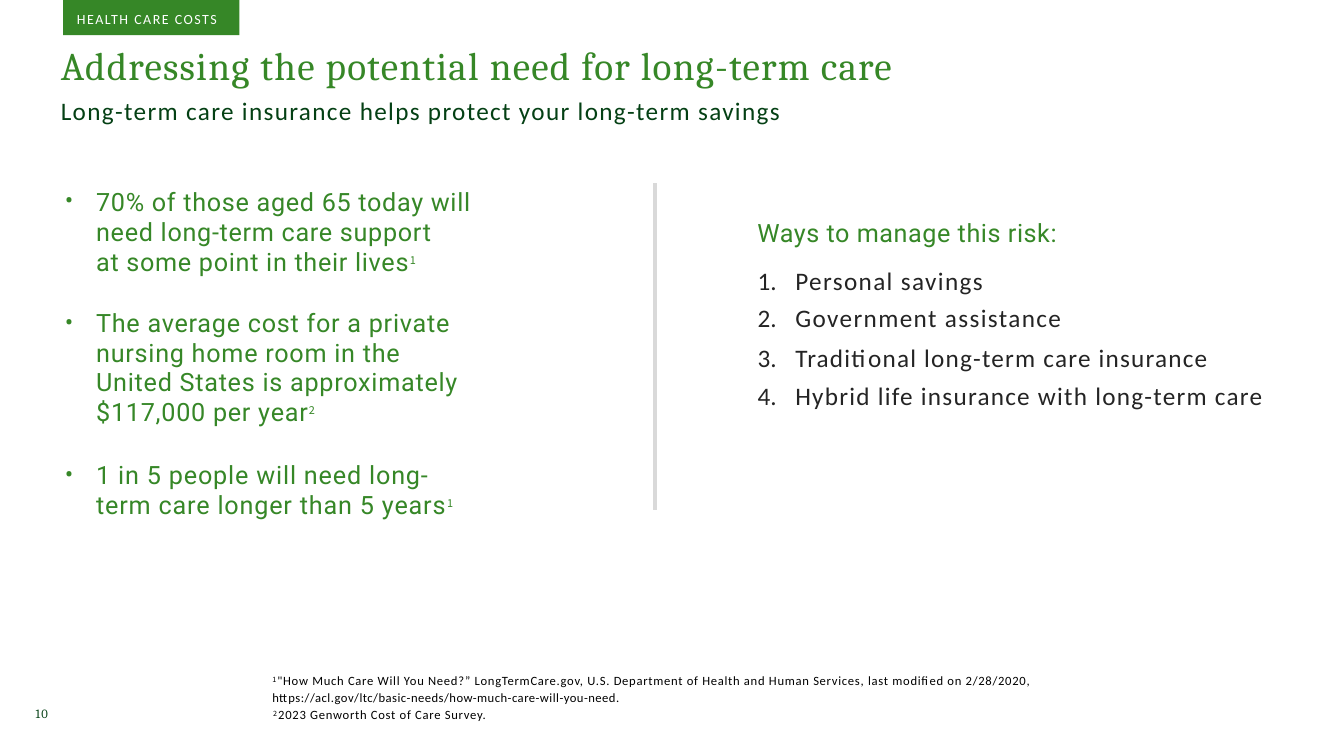
from dataclasses import dataclass

from lxml.etree import SubElement
from pptx import Presentation
from pptx.dml.color import RGBColor
from pptx.enum.shapes import MSO_CONNECTOR as Connector, MSO_SHAPE as Preset
from pptx.enum.text import MSO_AUTO_SIZE as AutoSize
from pptx.oxml.ns import qn
from pptx.util import Pt


@dataclass(frozen=True)
class Theme:
    green: str = "368727"
    dark_green: str = "044014"
    ink: str = "242424"
    black: str = "000000"
    white: str = "FFFFFF"
    rule: str = "D9D9D9"
    serif: str = "Cambria"
    sans: str = "Calibri"
    accent: str = "Roboto"
    note_mark: str = "Noto Sans CJK TC"
    title: float = 28
    body: float = 18
    mark: float = 13.5
    tag: float = 10
    small: float = 9


def add_text(paragraph, text, font, size, color, tracking=0, raised=0):
    for index, line in enumerate(text.split("\n")):
        if index:
            paragraph.add_line_break()
        run = paragraph.add_run()
        run.text = line
        run.font.name = font
        run.font.size = Pt(size)
        run.font.color.rgb = RGBColor.from_string(color)
        properties = run._r.get_or_add_rPr()
        properties.set("spc", str(round(tracking * 100)))
        if raised:
            properties.set("baseline", str(raised * 1000))


class SlideBuilder:
    def __init__(self, slide, theme):
        self.slide = slide
        self.theme = theme

    def text_box(self, left, top, width, height, inset_top=1, inset_right=0):
        shape = self.slide.shapes.add_textbox(Pt(left), Pt(top), Pt(width), Pt(height))
        frame = shape.text_frame
        frame.word_wrap = True
        frame.auto_size = AutoSize.SHAPE_TO_FIT_TEXT
        frame.margin_left = frame.margin_bottom = 0
        frame.margin_top = Pt(inset_top)
        frame.margin_right = Pt(inset_right)
        return frame

    def paragraph(self, frame, runs, first=False, margin=1, indent=0, before=0,
                  line_spacing=None, bullet=None):
        paragraph = frame.paragraphs[0] if first else frame.add_paragraph()
        properties = paragraph._p.get_or_add_pPr()
        properties.set("marL", str(Pt(margin)))
        properties.set("indent", str(Pt(indent)))
        if bullet == "number":
            SubElement(properties, qn("a:buAutoNum"), type="arabicPeriod")
        elif bullet:
            SubElement(properties, qn("a:buFont"), typeface=self.theme.accent)
            SubElement(properties, qn("a:buChar"), char=bullet)
        paragraph.space_before = Pt(before)
        if line_spacing:
            paragraph.line_spacing = line_spacing
        for text, text_format in runs:
            add_text(paragraph, text, **text_format)

    def fact(self, text, note, tracking, line_spacing, **box):
        theme = self.theme
        body = dict(font=theme.accent, size=theme.body, color=theme.green, tracking=tracking)
        mark = dict(font=theme.note_mark, size=theme.mark, color=theme.green,
                    tracking=0.4, raised=37)
        self.paragraph(self.text_box(left=43.2, **box), [(text, body), (note, mark)],
                       first=True, margin=25.5, indent=-22.3,
                       line_spacing=line_spacing, bullet="•")

    def band(self, left, top, width, height, color):
        shape = self.slide.shapes.add_shape(
            Preset.RECTANGLE, Pt(left), Pt(top), Pt(width), Pt(height))
        shape.shadow.inherit = False
        shape.fill.solid()
        shape.fill.fore_color.rgb = RGBColor.from_string(color)
        shape.line.fill.background()

    def vertical_rule(self, left, top, bottom, color, weight):
        connector = self.slide.shapes.add_connector(
            Connector.STRAIGHT, Pt(left), Pt(top), Pt(left), Pt(bottom))
        connector.line.color.rgb = RGBColor.from_string(color)
        connector.line.width = Pt(weight)
        SubElement(connector._element.spPr, qn("a:effectLst"))


def build_heading(builder):
    theme = builder.theme
    frame = builder.text_box(42.5, 20.9, 650, 69.8, inset_top=8.7)
    title = dict(font=theme.serif, size=theme.title, color=theme.green, tracking=0.92)
    subtitle = dict(font=theme.sans, size=theme.body, color=theme.dark_green, tracking=0.95)
    builder.paragraph(frame, [("Addressing the potential need for long-term care", title)],
                      first=True)
    builder.paragraph(
        frame, [("Long-term care insurance helps protect your long-term savings", subtitle)],
        before=5)


def build_facts(builder):
    builder.fact("70% of those aged 65 today will need long-term care support\n"
                 "at some point in their lives", "1", 0.5, None,
                 top=131.8, width=296, height=67)
    builder.fact("The average cost for a private nursing home room in the United States "
                 "is approximately $117,000 per year", "2", 0.55, 0.99,
                 top=218.9, width=306.7, height=87.8, inset_top=1.2, inset_right=12)
    builder.fact("1 in 5 people will need long-term care longer than 5 years", "1", 0.6, Pt(20.9),
                 top=326.9, width=304.6, height=44.6, inset_top=2.2, inset_right=18)


def build_options(builder):
    theme = builder.theme
    frame = builder.text_box(540, 141.8, 363.6, 152.6, inset_top=13.4)
    heading = dict(font=theme.accent, size=theme.body, color=theme.green, tracking=0.4)
    builder.paragraph(frame, [("Ways to manage this risk:", heading)], first=True)
    options = [
        ("Personal savings", 1, 12.5),
        ("Government assistance", 1, 5.2),
        ("Traditional long-term care insurance", 0.88, 6.5),
        ("Hybrid life insurance with long-term care", 0.9, 6.2),
    ]
    for text, tracking, before in options:
        option = dict(font=theme.sans, size=theme.body, color=theme.ink, tracking=tracking)
        builder.paragraph(frame, [(text, option)], margin=28.1, indent=-27,
                          before=before, bullet="number")


def build_footnotes(builder):
    theme = builder.theme
    frame = builder.text_box(191.5, 478.8, 551.5, 38.2)
    small = dict(size=theme.small, color=theme.black)
    mark = dict(small, font=theme.note_mark, tracking=0.8, raised=28)
    note = dict(small, font=theme.sans, tracking=0.5)
    address = dict(note, tracking=0.34)
    builder.paragraph(frame, [
        ("1", mark),
        ("\"How Much Care Will You Need?” LongTermCare.gov, U.S. Department of Health "
         "and Human Services, last modified on 2/28/2020, ", note),
        ("https://acl.gov/ltc/basic-needs/how-much-care-will-you-need.", address),
    ], first=True, margin=3, line_spacing=1.11)
    builder.paragraph(frame, [("2", mark), ("2023 Genworth Cost of Care Survey.", note)],
                      margin=3.6, before=1.2)


def build_tag_and_number(builder):
    theme = builder.theme
    builder.band(45, 0, 126, 25.2, theme.green)
    tag = dict(font=theme.sans, size=theme.tag, color=theme.white, tracking=1.08)
    number = dict(font=theme.serif, size=theme.small, color=theme.dark_green, tracking=0.8)
    builder.paragraph(builder.text_box(54, 6.5, 105.8, 13.7),
                      [("HEALTH CARE COSTS", tag)], first=True)
    builder.paragraph(builder.text_box(24.5, 503.3, 13, 13), [("10", number)], first=True)


def main():
    presentation = Presentation()
    presentation.slide_width = Pt(960)
    presentation.slide_height = Pt(540)
    slide = presentation.slides.add_slide(presentation.slide_layouts[6])
    builder = SlideBuilder(slide, Theme())
    build_heading(builder)
    build_facts(builder)
    builder.vertical_rule(468, 131, 364.3, builder.theme.rule, 2.5)
    build_options(builder)
    build_footnotes(builder)
    build_tag_and_number(builder)
    presentation.save("out.pptx")


if __name__ == "__main__":
    main()
